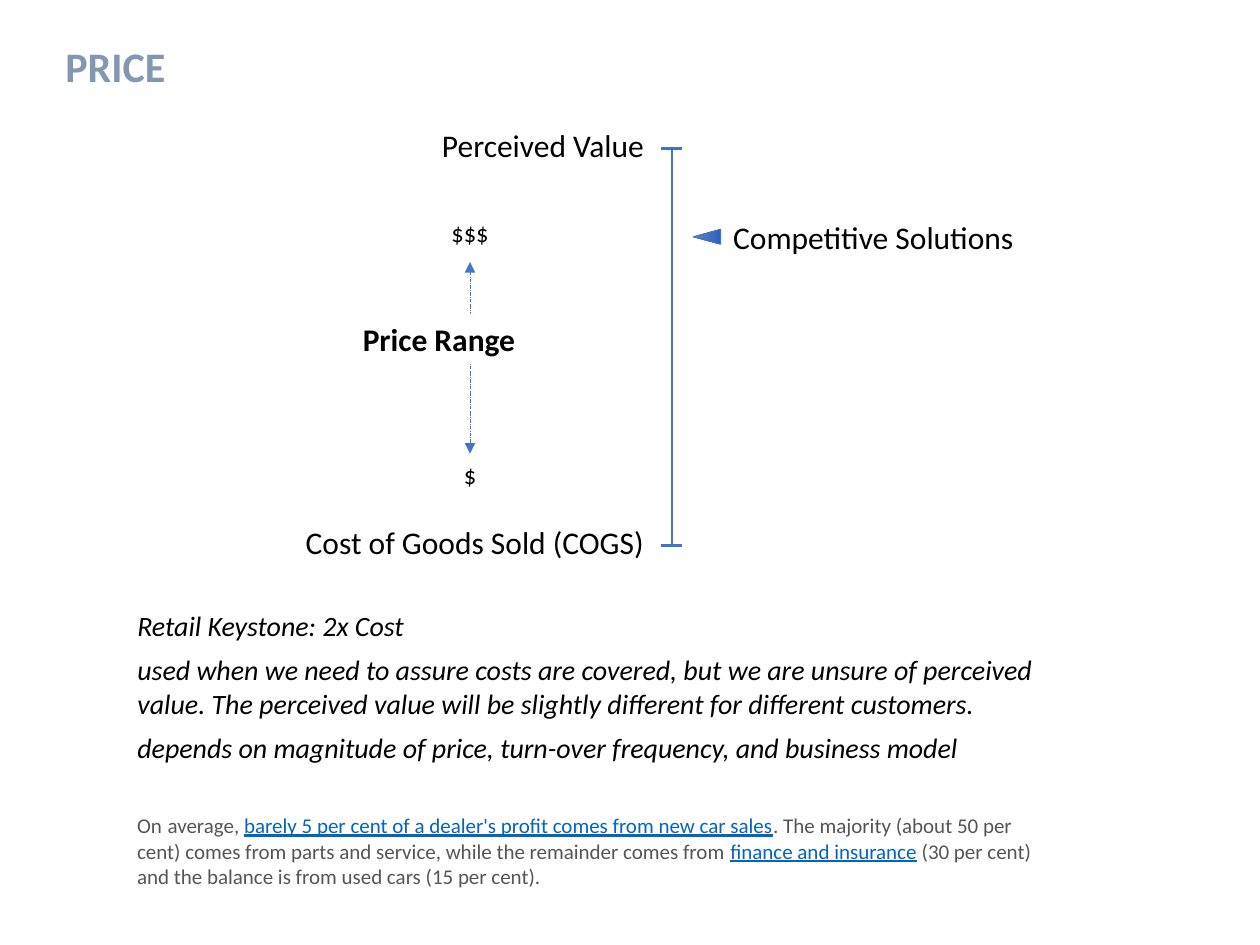
from lxml.etree import SubElement
from pptx import Presentation
from pptx.dml.color import RGBColor
from pptx.enum.dml import MSO_LINE_DASH_STYLE as DASH
from pptx.enum.shapes import MSO_CONNECTOR, MSO_SHAPE
from pptx.enum.text import MSO_ANCHOR, PP_ALIGN
from pptx.oxml.ns import qn
from pptx.util import Pt

COLORS = {
    "title": "8497B0", "text": "000000", "quote": "555555", "link": "0563C1",
    "line": "4472C4", "paper": "FFFFFF", "light": "6183CB", "dark": "3062BB",
}
FONT = "Calibri"


def rgb(name):
    """Return the named colour."""
    return RGBColor.from_string(COLORS[name])


def place(shape, left, top, width, height):
    """Move and size a shape in points."""
    shape.left, shape.top = Pt(left), Pt(top)
    shape.width, shape.height = Pt(width), Pt(height)


def style(run, size, color="text", bold=False, italic=False, underline=False):
    """Format one run."""
    font = run.font
    font.name, font.size, font.color.rgb = FONT, Pt(size), rgb(color)
    font.bold, font.italic, font.underline = bold, italic, underline


def add_label(slide, text, left, top, width, height=28.8, size=18,
              bold=False, align=PP_ALIGN.LEFT, filled=False):
    """Add a one-line label, with a white ground if filled."""
    label = slide.shapes.add_textbox(Pt(left), Pt(top), Pt(width), Pt(height))
    if filled:
        label.fill.solid()
        label.fill.fore_color.rgb = rgb("paper")
    frame = label.text_frame
    frame.text = text
    frame.word_wrap = False
    frame.paragraphs[0].alignment = align
    style(frame.paragraphs[0].runs[0], size, bold=bold)


def add_line(slide, x1, y1, x2, y2, weight=1.5):
    """Add a plain straight line without shadow."""
    line = slide.shapes.add_connector(
        MSO_CONNECTOR.STRAIGHT, Pt(x1), Pt(y1), Pt(x2), Pt(y2))
    line.line.color.rgb = rgb("line")
    line.line.width = Pt(weight)
    SubElement(line._element.spPr, qn("a:effectLst"))
    return line


def add_range_arrow(slide, x, top, bottom):
    """Add the dashed vertical arrow with two heads."""
    arrow = add_line(slide, x, top, x, bottom, 0.25)
    arrow.line.dash_style = DASH.LONG_DASH_DOT
    for end in ("a:headEnd", "a:tailEnd"):
        SubElement(arrow.line._get_or_add_ln(), qn(end), type="triangle")


def add_marker(slide, left, top, width, height):
    """Add the gradient triangle that points left at the scale."""
    marker = slide.shapes.add_shape(
        MSO_SHAPE.ISOSCELES_TRIANGLE, Pt(left), Pt(top), Pt(width), Pt(height))
    marker.rotation = 270
    marker.shadow.inherit = False
    marker.fill.gradient()
    marker.fill.gradient_angle = 270
    for stop, position, color in zip(marker.fill.gradient_stops, (0, 1), ("light", "dark")):
        stop.position, stop.color.rgb = position, rgb(color)
    marker.line.color.rgb = rgb("line")
    marker.line.width = Pt(0.5)


def add_title(slide, left, top, width, height):
    """Fill the title placeholder."""
    title = slide.shapes.title
    place(title, left, top, width, height)
    frame = title.text_frame
    frame.text = "PRICE"
    frame.vertical_anchor = MSO_ANCHOR.TOP
    frame.paragraphs[0].alignment = PP_ALIGN.LEFT
    style(frame.paragraphs[0].runs[0], 24, "title", bold=True)


def add_price_scale(slide, left, top, width, height):
    """Draw the scale from cost to perceived value with its price range."""
    scale_x, range_x = left + 219, left + 103.7
    scale_top, scale_bottom = top + 16.6, top + height - 12.6
    for text, y, label_width in (("Perceived Value", top, 131),
                                 ("Cost of Goods Sold (COGS)", top + 226.8, 210.2)):
        add_label(slide, text, left + 210.2 - label_width, y, label_width,
                  align=PP_ALIGN.RIGHT)
    add_label(slide, "Competitive Solutions", left + width - 177, top + 52.6, 177)
    add_marker(slide, left + 234.7, top + 59, 8.6, 15.8)

    add_line(slide, scale_x, scale_top, scale_x, scale_bottom)
    for y in (scale_top, scale_bottom):
        add_line(slide, scale_x - 6, y, scale_x + 6, y)

    add_range_arrow(slide, range_x, top + 81.4, top + 190.8)
    add_label(slide, "Price Range", left + 35.3, top + 110.9, 102.2,
              bold=True, filled=True)
    for text, y, label_width in (("$$$", top + 52.6, 36), ("$", top + 190.8, 21.6)):
        add_label(slide, text, range_x - label_width / 2, y, label_width, 24.5, 14,
                  align=PP_ALIGN.CENTER, filled=True)


def add_keystone(slide, left, top, width, height):
    """Fill the body placeholder with the keystone rule."""
    body = slide.placeholders[1]
    place(body, left, top, width, height)
    frame = body.text_frame
    frame.text = "\n".join((
        "Retail Keystone: 2x Cost",
        "used when we need to assure costs are covered, but we are unsure of perceived "
        "value. The perceived value will be slightly different for different customers.",
        "depends on magnitude of price, turn-over frequency, and business model",
    ))
    for index, paragraph in enumerate(frame.paragraphs):
        paragraph.space_before = Pt(6 if index else 0)
        properties = paragraph._p.get_or_add_pPr()
        properties.set("marL", "0")
        properties.set("indent", "0")
        SubElement(properties, qn("a:buNone"))
        style(paragraph.runs[0], 16, italic=True)


def add_dealer_quote(slide, left, top, width, height):
    """Add the quote on car dealers with its underlined sources."""
    quote = slide.shapes.add_textbox(Pt(left), Pt(top), Pt(width), Pt(height))
    quote.text_frame.word_wrap = True
    paragraph = quote.text_frame.paragraphs[0]
    for text, size, linked in (
        ("On", 12, False),
        (" ", 14, False),
        ("average, ", 12, False),
        ("barely 5 per cent of a dealer's profit comes from new car sales", 12, True),
        (". The majority (about 50 per cent) comes from parts and service, "
         "while the remainder comes from ", 12, False),
        ("finance and insurance", 12, True),
        (" (30 per cent) and the balance is from used cars (15 per cent).", 12, False),
    ):
        run = paragraph.add_run()
        run.text = text
        style(run, size, "link" if linked else "quote", underline=linked)


def main():
    """Build and save the price slide."""
    deck = Presentation()
    deck.slide_width, deck.slide_height = Pt(720), Pt(540)
    slide = deck.slides.add_slide(deck.slide_layouts[1])
    add_title(slide, 30.2, 19.4, 303.8, 36)
    add_price_scale(slide, 164.9, 68.4, 424, 256)
    add_keystone(slide, 71.3, 344.2, 532.8, 97.2)
    add_dealer_quote(slide, 71.3, 458.6, 532.8, 53.3)
    deck.save("out.pptx")


if __name__ == "__main__":
    main()
